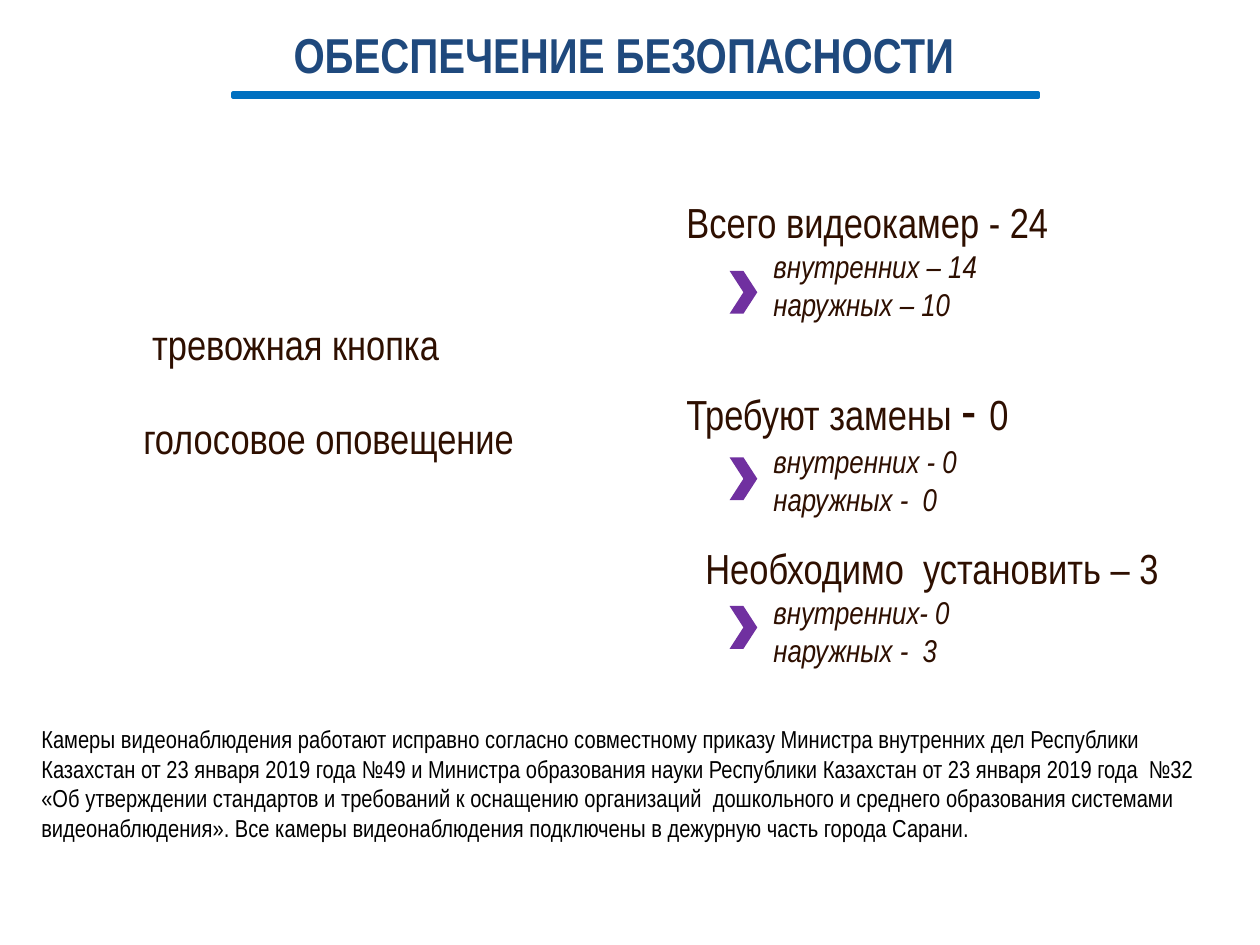
from pptx import Presentation
from pptx.dml.color import RGBColor
from pptx.enum.shapes import MSO_SHAPE
from pptx.enum.text import MSO_ANCHOR, PP_ALIGN
from pptx.util import Inches, Pt

RECT = MSO_SHAPE.RECTANGLE
CHEVRON = MSO_SHAPE.CHEVRON
BOTTOM = MSO_ANCHOR.BOTTOM
CENTER = PP_ALIGN.CENTER

HEAD = {"size": Pt(24)}
DASH = {"size": Pt(32)}
ITEM = {"size": Pt(18), "italic": True}
TITLE = {"size": Pt(28), "bold": True}
NOTE = {"size": Pt(14)}
WIDE = {"line_spacing": 1.5}
GAP = {"line_spacing": 1.5, "space_before": Pt(10.7)}


def paint(target, color):
    target.rgb = RGBColor.from_string(color)


def add_text(box, color, rows):
    shape = slide.shapes.add_textbox(*map(Inches, box))
    frame = shape.text_frame
    frame.word_wrap = True
    for num, (runs, form, indent) in enumerate(rows):
        para = frame.add_paragraph() if num else frame.paragraphs[0]
        if indent:
            para._p.get_or_add_pPr().set("marL", str(Inches(indent)))
        for key, value in form.items():
            setattr(para, key, value)
        for words, style in runs:
            run = para.add_run()
            run.text = words
            run.font.name = "Arial Narrow"
            paint(run.font.color, color)
            for key, value in style.items():
                setattr(run.font, key, value)
    return frame


deck = Presentation()
deck.slide_width = Inches(10)
deck.slide_height = Inches(7.5)
slide = deck.slides.add_slide(deck.slide_layouts[6])

title = add_text((-0.06, 0.04, 10.02, 0.62), "1F497D",
                 [([("ОБЕСПЕЧЕНИЕ БЕЗОПАСНОСТИ", TITLE)], {"alignment": CENTER}, 0)])
edges = {"vertical_anchor": BOTTOM, "margin_left": 0, "margin_right": 0,
         "margin_top": Inches(0.05), "margin_bottom": 0}
for key, value in edges.items():
    setattr(title, key, value)

add_text((0.51, 2.28, 3.94, 2.14), "2E0F00", [
    ([("тревожная кнопка", HEAD)], WIDE, 0.6),
    ([("голосовое оповещение", HEAD)], GAP, 0.53),
])

groups = [
    ([("Всего видеокамер - 24", HEAD)], WIDE, 0,
     ["внутренних – 14", "наружных – 10"]),
    ([("Требуют замены ", HEAD), ("- ", DASH), ("0", HEAD)], GAP, 0,
     ["внутренних - 0", "наружных -  0"]),
    ([("Необходимо  установить – 3", HEAD)], WIDE, 0.15,
     ["внутренних- 0", "наружных -  3"]),
]
rows = []
for runs, form, indent, items in groups:
    rows.append((runs, form, indent))
    rows += [([(item, ITEM)], {}, 0.69) for item in items]
add_text((5.35, 1.31, 4.3, 5.3), "2E0F00", rows)

rule = slide.shapes.add_shape(RECT, *map(Inches, (1.85, 0.74, 6.39, 0.03)))
rule.shadow.inherit = False
rule.fill.solid()
paint(rule.fill.fore_color, "B7DEE8")
paint(rule.line.color, "0070C0")
rule.line.width = Pt(2)

for top in (2.15, 3.63, 4.81):
    mark = slide.shapes.add_shape(CHEVRON, *map(Inches, (5.79, top, 0.22, 0.34)))
    mark.shadow.inherit = False
    mark.fill.solid()
    paint(mark.fill.fore_color, "7030A0")
    mark.line.fill.background()

note = (
    "Камеры видеонаблюдения работают исправно согласно совместному приказу "
    "Министра внутренних дел Республики Казахстан от 23 января 2019 года №49 "
    "и Министра образования науки Республики Казахстан от 23 января 2019 года  №32 "
    "«Об утверждении стандартов и требований к оснащению организаций  дошкольного "
    "и среднего образования системами видеонаблюдения». Все камеры видеонаблюдения "
    "подключены в дежурную часть города Сарани."
)
add_text((0.23, 5.7, 9.53, 1.04), "000000", [([(note, NOTE)], {}, 0)])

deck.save("out.pptx")
